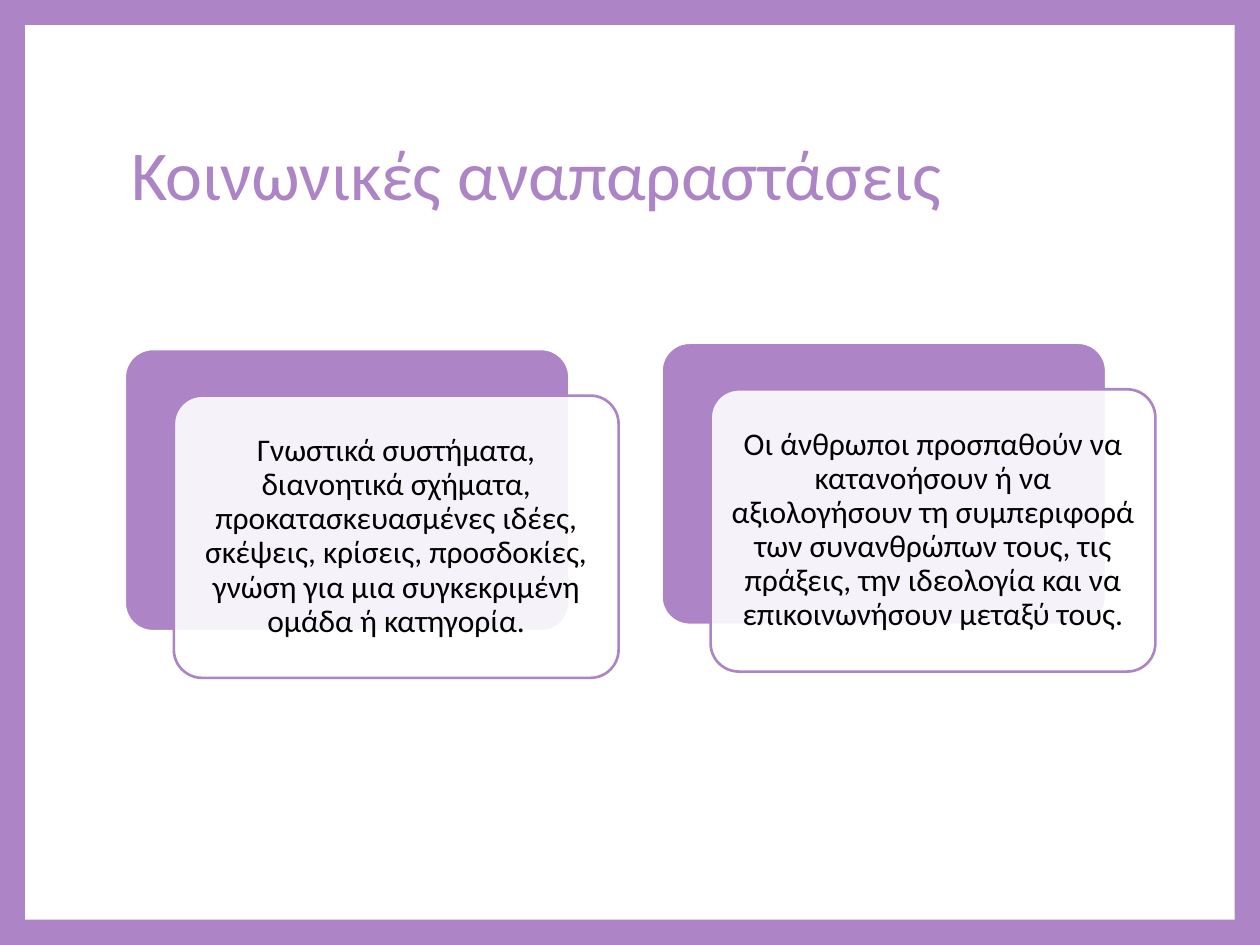
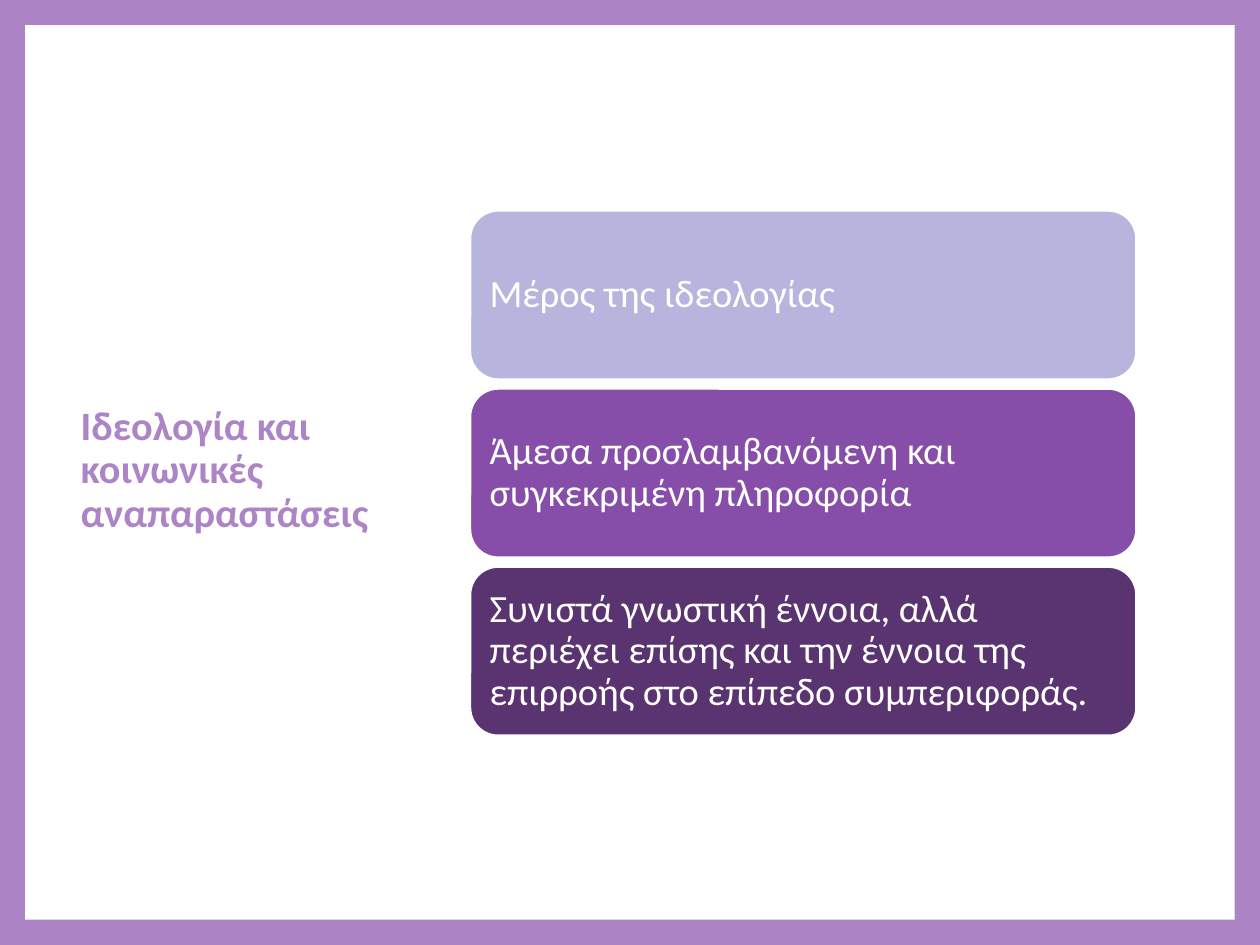
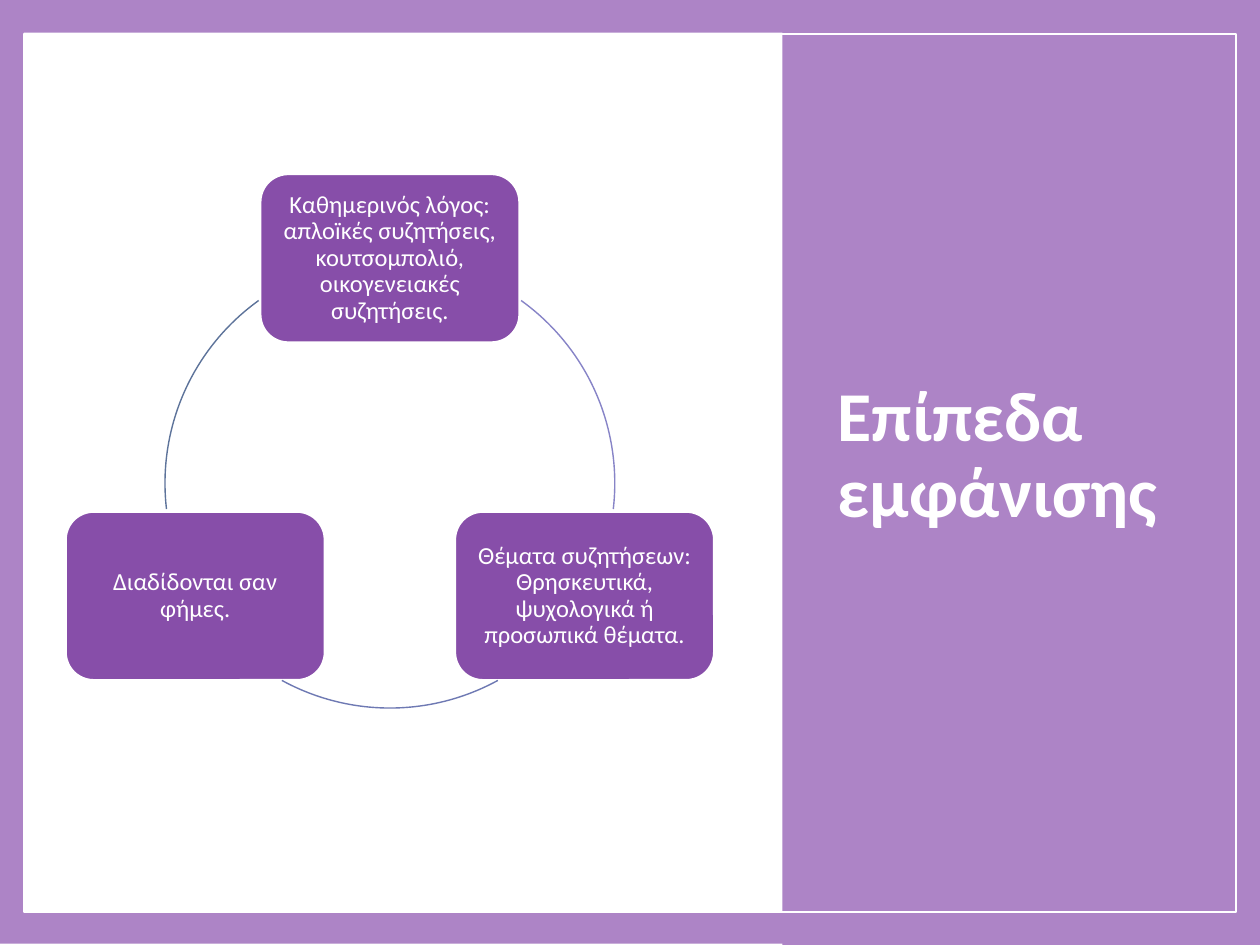
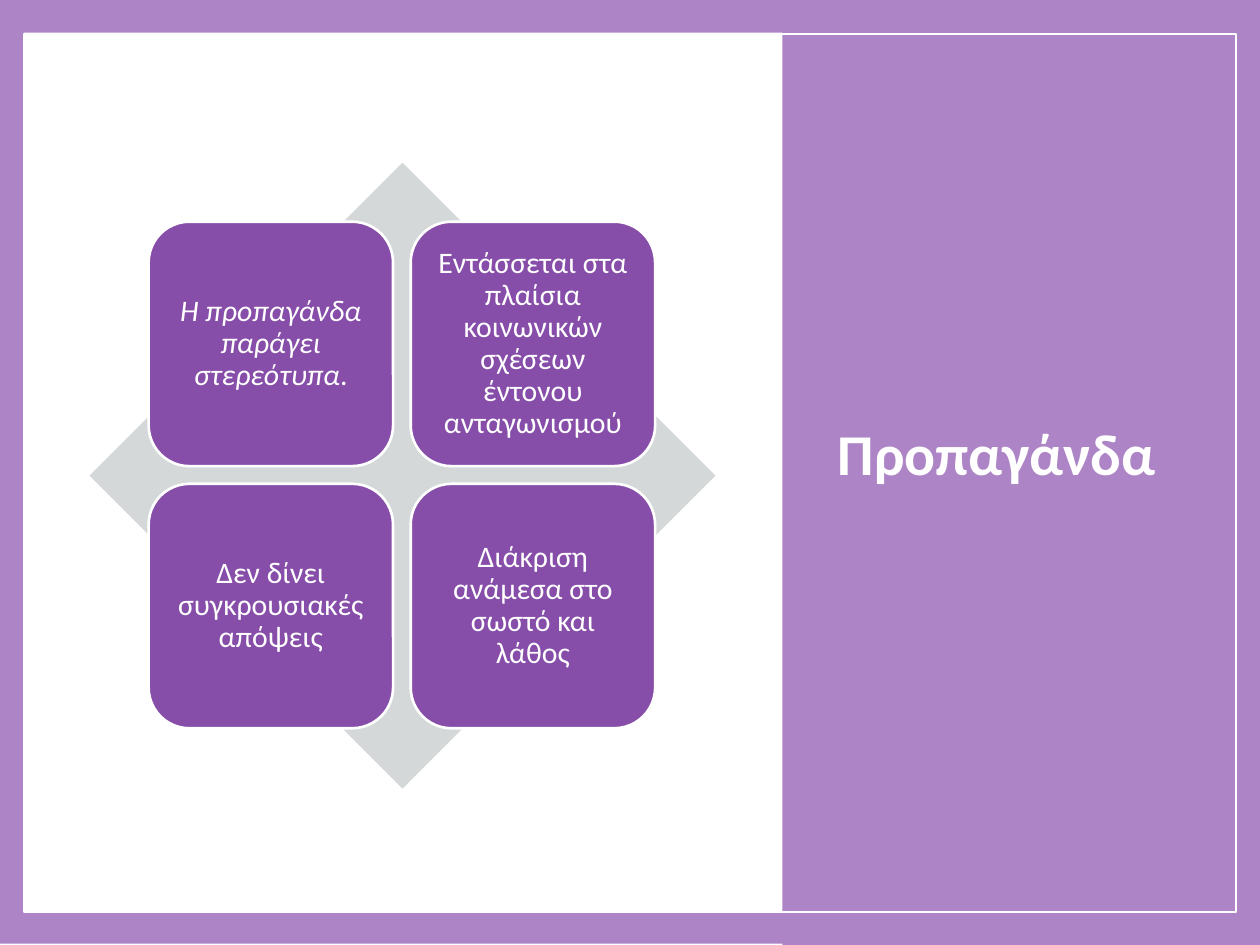
from lxml import etree
from pptx import Presentation
from pptx import util as u
from pptx.dml.color import RGBColor
from pptx.enum import shapes, text
from pptx.oxml.ns import qn

COLORS = {
    "frame": "AD84C6", "paper": "FFFFFF", "ink": "000000",
    "lilac": "B7B5DD", "violet": "874EA9", "plum": "5A3471", "diamond": "D5D8D9",
    "arc_right": "8784C7", "arc_bottom": "6E79B3", "arc_left": "5D739A",
}
FONT = "Calibri"
SHAPE = shapes.MSO_SHAPE
LEFT, CENTER = text.PP_ALIGN.LEFT, text.PP_ALIGN.CENTER
PANEL_TITLE_BOX = (6.55, 0.67, 2.93, 5.91)


def rgb(name):
    return RGBColor.from_string(COLORS[name])


def write(shape, content, size, color, align=CENTER, inset=0.1, bold=False):
    """Fill a shape with one paragraph; content is a string or (words, italic) pairs."""
    frame = shape.text_frame
    frame.word_wrap = True
    frame.auto_size = text.MSO_AUTO_SIZE.NONE
    frame.vertical_anchor = text.MSO_ANCHOR.MIDDLE
    frame.margin_left = frame.margin_right = u.Inches(inset)
    frame.margin_top = frame.margin_bottom = u.Inches(min(inset, 0.09))
    para = frame.paragraphs[0]
    para.alignment = align
    para.line_spacing = 0.9
    spans = [(content, False)] if isinstance(content, str) else content
    for words, italic in spans:
        span = para.add_run()
        span.text = words
        span.font.name = FONT
        span.font.size = u.Pt(size)
        span.font.bold = bold
        span.font.italic = italic
        span.font.color.rgb = rgb(color)


def draw(page, kind, box, fill=None, line=None, width=1.5, opacity=None):
    shape = page.shapes.add_shape(kind, *map(u.Inches, box))
    shape.shadow.inherit = False
    if fill:
        shape.fill.solid()
        shape.fill.fore_color.rgb = rgb(fill)
        if opacity:
            tint = shape.fill._xPr.find(qn("a:solidFill"))[0]
            etree.SubElement(tint, qn("a:alpha"), val=str(opacity * 1000))
    else:
        shape.fill.background()
    if line:
        shape.line.color.rgb = rgb(line)
        shape.line.width = u.Pt(width)
    else:
        shape.line.fill.background()
    return shape


def card(page, box, fill="violet", line="paper", corner=None, opacity=None):
    shape = draw(page, SHAPE.ROUNDED_RECTANGLE, box, fill, line, opacity=opacity)
    if corner:
        shape.adjustments[0] = corner
    return shape


def add_title(page, words, box, size, color, bold=False):
    title = page.shapes.title
    title.left, title.top, title.width, title.height = map(u.Inches, box)
    title.element.getparent().append(title.element)  # above the backdrop
    write(title, words, size, color, align=LEFT, bold=bold)


def new_page(deck, background):
    page = deck.slides.add_slide(deck.slide_layouts[5])
    page.background.fill.solid()
    page.background.fill.fore_color.rgb = rgb(background)
    return page


def framed_page(deck, words, title_box, size, bold=False):
    """White sheet inside a purple border."""
    page = new_page(deck, "frame")
    draw(page, SHAPE.RECTANGLE, (0.2, 0.2, 9.6, 7.1), "paper")
    add_title(page, words, title_box, size, "frame", bold)
    return page


def panel_page(deck, words, size):
    """White sheet with a purple title panel on the right."""
    page = new_page(deck, "paper")
    draw(page, SHAPE.RECTANGLE, (0, -0.01, 10, 7.5), "frame")
    draw(page, SHAPE.RECTANGLE, (0.19, 0.26, 9.62, 6.97), "paper")
    draw(page, SHAPE.RECTANGLE, (6.21, 0, 3.79, 7.5), "frame")
    add_title(page, words, PANEL_TITLE_BOX, size, "paper", bold=True)
    draw(page, SHAPE.RECTANGLE, (0.19, 0.27, 9.62, 6.97), line="paper", width=1)
    return page


def layered_card(page, left, top, words):
    """Purple card with a translucent text card shifted over it."""
    width, height = 3.53, 2.24
    card(page, (left, top, width, height), "frame", corner=0.1)
    front = card(page, (left + 0.39, top + 0.37, width, height),
                 "paper", "frame", corner=0.1, opacity=90)
    write(front, words, 18, "ink", inset=0.07)


def card_stack(page, box, items, gap=0.07):
    left, top, width, height = box
    card_height = (height - gap * (len(items) - 1)) / len(items)
    for row, (fill, words) in enumerate(items):
        shape = card(page, (left, top + row * (card_height + gap), width, card_height), fill)
        write(shape, words, 22, "paper", align=LEFT, inset=0.09)


def cycle(page, box, topics):
    """Three cards, at top, right and left, joined by arcs of one circle."""
    left, top, width, height = box
    card_width, card_height, radius = 2.06, 1.34, 1.785
    middle, low = left + (width - card_width) / 2, top + height - card_height
    spots = [(middle, top), (left + width - card_width, low), (left, low)]
    for (x, y), words in zip(spots, topics):
        shape = card(page, (x, y, card_width, card_height))
        write(shape, words, 14, "paper", inset=0.06)
    circle = (left + width / 2 - radius, top + card_height / 2, 2 * radius, 2 * radius)
    arcs = [("arc_right", 305.7, 6.6), ("arc_bottom", 61.3, 118.7), ("arc_left", 173.4, 234.3)]
    for color, start, end in arcs:
        arc = draw(page, SHAPE.ARC, circle, line=color, width=0.79)
        for index, degrees in enumerate((start, end)):
            arc.adjustments[index] = degrees * 0.6  # 60000ths of a degree / 100000


def diamond_matrix(page, box, items):
    """Two by two cards centred on a diamond."""
    left, top, size, _ = box
    side, step, margin = 1.94, 2.08, 0.47
    draw(page, SHAPE.DIAMOND, box, "diamond")
    for index, words in enumerate(items):
        row, column = divmod(index, 2)
        shape = card(page, (left + margin + column * step, top + margin + row * step, side, side))
        write(shape, words, 17, "paper", inset=0.07)


def main():
    deck = Presentation()
    deck.slide_width, deck.slide_height = u.Inches(10), u.Inches(7.5)

    # Social representations
    page = framed_page(deck, "Κοινωνικές αναπαραστάσεις", (0.94, 0.67, 8.1, 1.48), 40)
    layered_card(page, 0.99, 2.77,
                 "Γνωστικά συστήματα, διανοητικά σχήματα, προκατασκευασμένες ιδέες, σκέψεις, "
                 "κρίσεις, προσδοκίες, γνώση για μια συγκεκριμένη ομάδα ή κατηγορία.")
    layered_card(page, 5.25, 2.72,
                 "Οι άνθρωποι προσπαθούν να κατανοήσουν ή να αξιολογήσουν τη συμπεριφορά των "
                 "συνανθρώπων τους, τις πράξεις, την ιδεολογία και να επικοινωνήσουν μεταξύ τους.")

    # Ideology
    page = framed_page(deck, "Ιδεολογία και κοινωνικές αναπαραστάσεις",
                       (0.54, 0.67, 2.76, 6.13), 23, bold=True)
    card_stack(page, (3.73, 1.67, 5.29, 4.17), [
        ("lilac", "Μέρος της ιδεολογίας"),
        ("violet", "Άμεσα προσλαμβανόμενη και συγκεκριμένη πληροφορία"),
        ("plum", "Συνιστά γνωστική έννοια, αλλά περιέχει επίσης και την έννοια της "
                 "επιρροής στο επίπεδο συμπεριφοράς."),
    ])

    # Levels of appearance
    page = panel_page(deck, "Επίπεδα εμφάνισης", 40)
    cycle(page, (0.52, 1.38, 5.15, 4.02), [
        "Καθημερινός λόγος: απλοïκές συζητήσεις, κουτσομπολιό, οικογενειακές συζητήσεις.",
        "Θέματα συζητήσεων: Θρησκευτικά, ψυχολογικά ή προσωπικά θέματα.",
        "Διαδίδονται σαν φήμες.",
    ])

    # Propaganda
    page = panel_page(deck, "Προπαγάνδα", 33)
    diamond_matrix(page, (0.71, 1.29, 4.97, 4.97), [
        [("Η προπαγάνδα παράγει στερεότυπα", True), (".", False)],
        "Εντάσσεται στα πλαίσια κοινωνικών σχέσεων έντονου ανταγωνισμού",
        "Δεν δίνει συγκρουσιακές απόψεις",
        "Διάκριση ανάμεσα στο σωστό και λάθος",
    ])

    deck.save("out.pptx")


if __name__ == "__main__":
    main()
